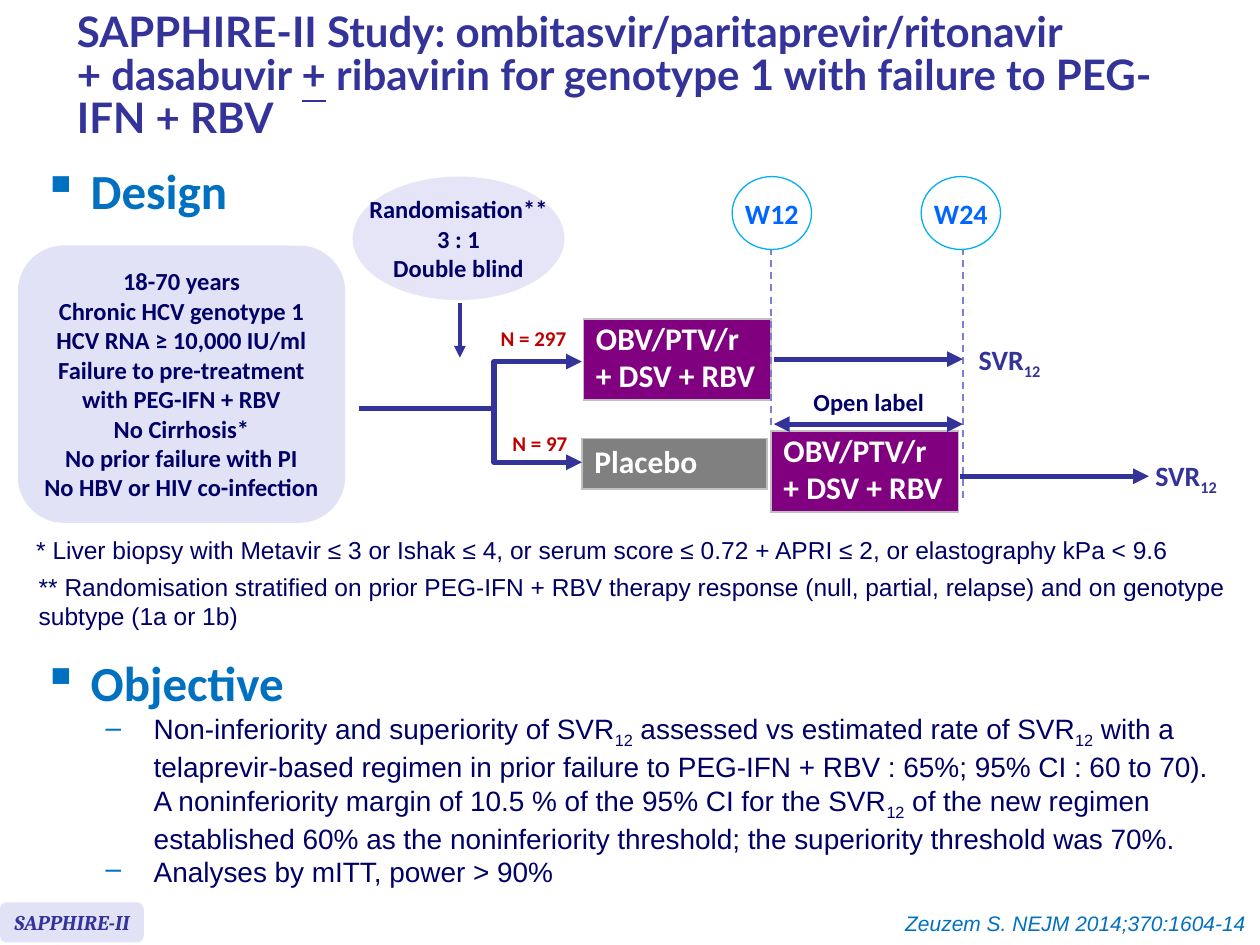
from lxml import etree
from pptx import Presentation, util as u
from pptx.dml.color import RGBColor
from pptx.enum import dml, shapes, text
from pptx.oxml import ns

COLOURS = {
    "indigo": "333399", "navy": "000066", "blue": "0070C0", "week": "0066FF",
    "ring": "00B0F0", "dash": "7E7ED4", "lilac": "E2E2F6", "mist": "E5E5F7",
    "purple": "800080", "grey": "808080", "border": "C0C0C0", "red": "C00000",
    "white": "FFFFFF",
}
LEFT, CENTRE, RIGHT = text.PP_ALIGN.LEFT, text.PP_ALIGN.CENTER, text.PP_ALIGN.RIGHT
OVAL, ROUNDED = shapes.MSO_SHAPE.OVAL, shapes.MSO_SHAPE.ROUNDED_RECTANGLE
SUBSCRIPT = {"baseline": "-25000"}

TITLE = ["SAPPHIRE-II Study: ombitasvir/paritaprevir/ritonavir\n"
         "+ dasabuvir ~+~ ribavirin for genotype 1 with failure to PEG-IFN + RBV"]
ELIGIBILITY = [
    "18-70 years", "Chronic HCV genotype 1", "HCV RNA ≥ 10,000 IU/ml",
    "Failure to pre-treatment", "with PEG-IFN + RBV", "No Cirrhosis*",
    "No prior failure with PI", "No HBV or HIV co-infection",
]
RANDOMISATION = ["Randomisation**", "3 : 1", "Double blind"]
REGIMEN = ["OBV/PTV/r", "+ DSV + RBV"]
BIOPSY_NOTE = ["* Liver biopsy with Metavir ≤ 3 or Ishak ≤ 4, or serum score "
               "≤ 0.72 + APRI ≤ 2, or elastography kPa < 9.6"]
STRATA_NOTE = ["** Randomisation stratified on prior PEG-IFN + RBV therapy response "
               "(null, partial, relapse) and on genotype", "subtype (1a or 1b)"]
AIMS = [
    "Non-inferiority and superiority of SVR~12~ assessed vs estimated rate of SVR~12~ "
    "with a telaprevir-based regimen in prior failure to PEG-IFN + RBV : 65%; "
    "95% CI : 60 to 70).\n"
    "A noninferiority margin of 10.5 % of the 95% CI for the SVR~12~ of the new regimen "
    "established 60% as the noninferiority threshold; the superiority threshold was 70%.",
    "Analyses by mITT, power > 90%",
]

WEEKS = [("W12", 15.56), ("W24", 19.37)]
WEEK_LINES = [15.54, 19.41]
ARMS = [(REGIMEN, "purple", 11.76, 6.43, 3.78, 1.63),
        (["Placebo"], "grey", 11.73, 8.84, 3.73, 1.02)]
OPEN_ARM = (REGIMEN, "purple", 15.54, 8.69, 3.78, 1.63)
ARM_SIZES = [("N = 297", 9.83, 6.43, 1.85), ("N = 97", 10.06, 8.56, 1.65)]
OUTCOMES = [(19.48, 6.78), (23.04, 9.12)]
FLOW = [
    ((9.27, 6.1, 9.27, 7.21), 2.25, ["tailEnd"]),
    ((7.24, 8.23, 9.93, 8.23), 3, []),
    ((15.6, 7.24, 19.41, 7.24), 3, ["tailEnd"]),
    ((19.35, 9.6, 23.16, 9.6), 3, ["tailEnd"]),
    ((15.6, 8.55, 19.41, 8.55), 3, ["headEnd", "tailEnd"]),
]
SPLIT = [(11.73, 7.29), (9.96, 7.29), (9.96, 9.32), (11.73, 9.32)]

deck = Presentation()
deck.slide_width, deck.slide_height = u.Cm(25.4), u.Cm(19.05)
slide = deck.slides.add_slide(deck.slide_layouts[6])


def rgb(name):
    return RGBColor.from_string(COLOURS[name])


def child(parent, tag, **attributes):
    return etree.SubElement(parent, ns.qn(tag), attributes)


def write(frame, paragraphs, size=14, font="Calibri", colour="navy", bold=True,
          italic=False, align=LEFT, anchor=None, wrap=False, leading=None, gap=0,
          bullet=None, indent=0.97, accent=SUBSCRIPT, append=False):
    frame.word_wrap = wrap
    if anchor is not None:
        frame.vertical_anchor = anchor
    for index, content in enumerate(paragraphs):
        first = index == 0 and not append
        line = frame.paragraphs[0] if first else frame.add_paragraph()
        if bullet:
            props = line._p.get_or_add_pPr()
            props.set("marL", str(u.Cm(indent)))
            props.set("indent", str(-u.Cm(0.97)))
            child(child(props, "a:buClr"), "a:srgbClr", val=COLOURS["blue"])
            child(props, "a:buChar", char=bullet)
        line.alignment = align
        if leading:
            line.line_spacing = leading
        line.space_before = u.Pt(0 if first else gap)
        for part, piece in enumerate(content.split("~")):
            for row, words in enumerate(piece.split("\n")):
                if row:
                    line.add_line_break()
                run = line.add_run()
                run.text = words
                run.font.size, run.font.name = u.Pt(size), font
                run.font.bold, run.font.italic = bold, italic
                run.font.color.rgb = rgb(colour)
                if part % 2:
                    for key, value in accent.items():
                        run._r.get_or_add_rPr().set(key, value)


def label(paragraphs, x, y, w, h, **style):
    box = slide.shapes.add_textbox(u.Cm(x), u.Cm(y), u.Cm(w), u.Cm(h))
    write(box.text_frame, paragraphs, **style)
    return box.text_frame


def bubble(kind, paragraphs, x, y, w, h, fill, ring=None, **style):
    body = slide.shapes.add_shape(kind, u.Cm(x), u.Cm(y), u.Cm(w), u.Cm(h))
    body.shadow.inherit = False
    body.fill.solid()
    body.fill.fore_color.rgb = rgb(fill)
    if ring:
        body.line.color.rgb, body.line.width = rgb(ring), u.Pt(0.75)
    else:
        body.line.fill.background()
    write(body.text_frame, paragraphs, anchor=text.MSO_ANCHOR.MIDDLE, **style)


def arm(paragraphs, fill, x, y, w, h):
    table = slide.shapes.add_table(1, 1, u.Cm(x), u.Cm(y), u.Cm(w), u.Cm(h)).table
    table.first_row = table.horz_banding = False
    cell = table.cell(0, 0)
    props = cell._tc.get_or_add_tcPr()
    for side in "LRTB":
        edge = child(props, f"a:ln{side}", w=str(u.Pt(1)))
        child(child(edge, "a:solidFill"), "a:srgbClr", val=COLOURS["border"])
    cell.fill.solid()
    cell.fill.fore_color.rgb = rgb(fill)
    cell.vertical_anchor = text.MSO_ANCHOR.MIDDLE
    write(cell.text_frame, paragraphs, size=18, colour="white", leading=0.8, gap=3.6, wrap=True)


def stroke(path_line, colour, width, heads=()):
    path_line.color.rgb, path_line.width = rgb(colour), u.Pt(width)
    for end in heads:
        child(path_line._get_or_add_ln(), f"a:{end}", type="triangle")


def straight(ends, colour, width, heads=(), dashed=False):
    link = slide.shapes.add_connector(shapes.MSO_CONNECTOR.STRAIGHT, *map(u.Cm, ends))
    if dashed:
        link.line.dash_style = dml.MSO_LINE.DASH
    stroke(link.line, colour, width, heads)
    child(link._element.spPr, "a:effectLst")


for group in ARMS:
    arm(*group)
bubble(OVAL, RANDOMISATION, 7.11, 3.56, 4.27, 2.49, "mist", align=CENTRE)
bubble(ROUNDED, ELIGIBILITY, 0.36, 4.95, 6.6, 5.59, "lilac", align=CENTRE)

for x in WEEK_LINES:
    straight((x, 5, x, 10.06), "dash", 1, dashed=True)
for week, centre in WEEKS:
    bubble(OVAL, [week], centre - 0.8, 3.56, 1.6, 1.47, "white", ring="ring",
           size=16, colour="week", align=CENTRE)
arm(*OPEN_ARM)

for ends, width, heads in FLOW:
    straight(ends, "indigo", width, heads)
corners = [(u.Cm(x), u.Cm(y)) for x, y in SPLIT]
outline = slide.shapes.build_freeform(*corners[0])
outline.add_line_segments(corners[1:], close=False)
split = outline.convert_to_shape()
split.shadow.inherit = False
split.fill.background()
stroke(split.line, "indigo", 3, ["headEnd", "tailEnd"])

for x, y in OUTCOMES:
    label(["SVR~12~"], x, y, 1.83, 0.94, size=16, colour="indigo")
for count, x, y, w in ARM_SIZES:
    label([count], x, y, w, 0.76, size=12, colour="red", align=CENTRE)
label(["Open label"], 16.13, 7.67, 2.77, 0.86, align=CENTRE)

label(BIOPSY_NOTE, 0.48, 10.67, 24.23, 0.86, font="Arial", bold=False, wrap=True)
label(STRATA_NOTE, 0.53, 11.4, 24.77, 1.45, font="Arial", bold=False)
label(TITLE, 1.3, 0.2, 23.19, 2.72, size=24, font="Lato", colour="indigo",
      anchor=text.MSO_ANCHOR.MIDDLE, wrap=True, leading=0.85, accent={"u": "sng"})

heading = dict(size=28, colour="blue", bullet="▪", wrap=True)
label(["Design"], 0.61, 3.12, 5.03, 1.6, **heading)
objective = label(["Objective"], 0.61, 13.03, 24.79, 5.89, **heading)
write(objective, AIMS, size=16, font="Arial", bold=False, bullet="–", indent=2.24,
      wrap=True, append=True)

bubble(ROUNDED, ["SAPPHIRE-II"], 0, 18.19, 2.9, 0.81, "lilac", size=12, font="Cambria",
       colour="indigo", italic=True)
label(["Zeuzem S. NEJM 2014;370:1604-14"], 17.7, 18.24, 7.67, 0.76, size=12, font="Arial",
      colour="blue", bold=False, italic=True, align=RIGHT)

deck.save("out.pptx")
